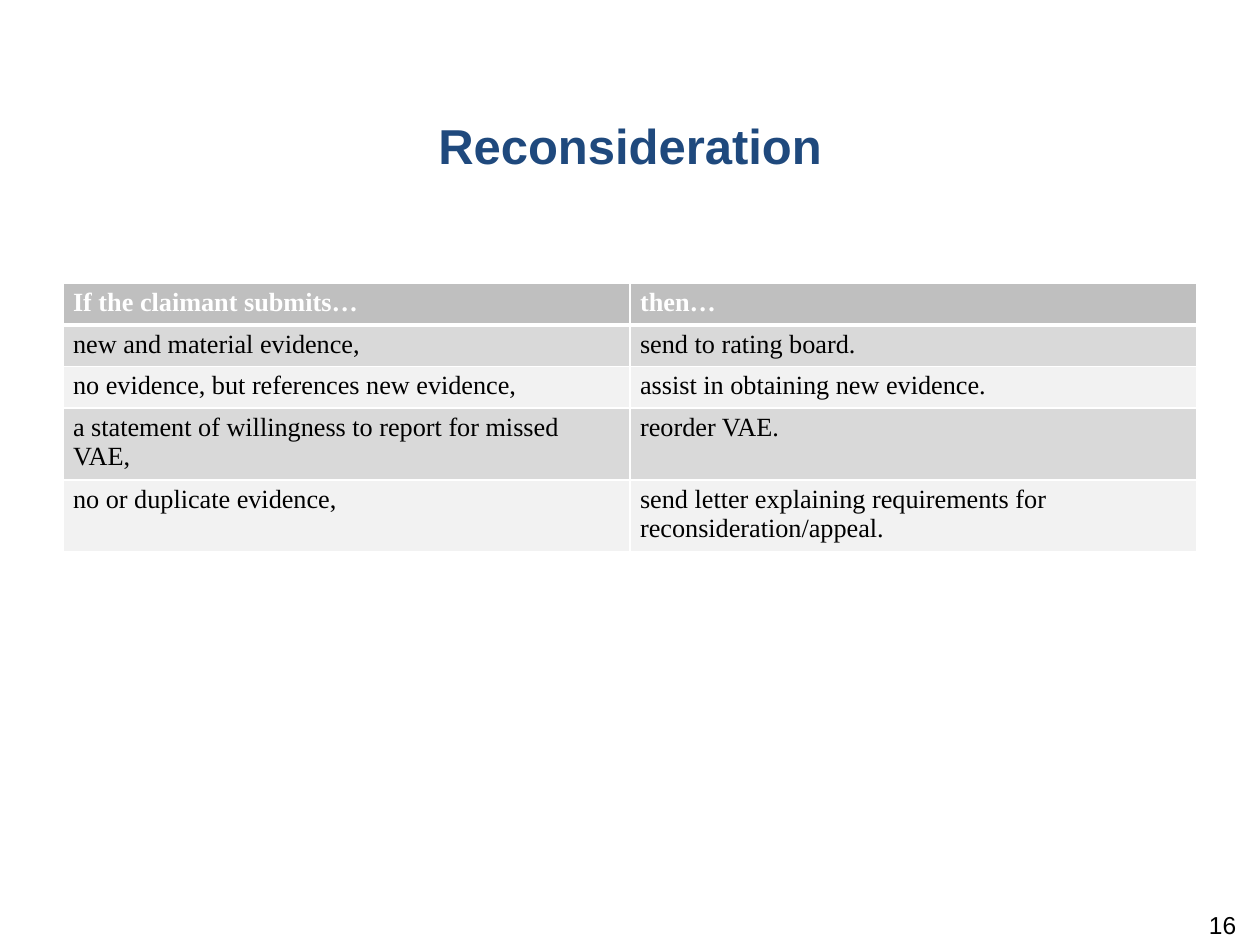
from dataclasses import dataclass
from typing import Any

from lxml.etree import SubElement
from pptx import Presentation
from pptx.dml.color import RGBColor
from pptx.enum.text import MSO_ANCHOR, PP_ALIGN
from pptx.oxml.ns import qn
from pptx.util import Inches, Pt


@dataclass(frozen=True)
class Theme:
    title: str = "1F497D"
    text: str = "000000"
    white: str = "FFFFFF"
    header: str = "BFBFBF"
    bands: tuple[str, str] = ("D9D9D9", "F2F2F2")
    sans: str = "Arial"
    serif: str = "Times New Roman"
    title_size: float = 28
    table_size: float = 15
    number_size: float = 14


@dataclass(frozen=True)
class Rule:
    condition: str
    action: str
    height: float


THEME = Theme()
RULES = [
    Rule("If the claimant submits…", "then…", 0.33),
    Rule("new and material evidence,", "send to rating board.", 0.33),
    Rule("no evidence, but references new evidence,", "assist in obtaining new evidence.", 0.33),
    Rule("a statement of willingness to report for missed VAE,", "reorder VAE.", 0.57),
    Rule("no or duplicate evidence,", "send letter explaining requirements for reconsideration/appeal.", 0.57),
]


def apply_format(target: Any, values: dict[str, Any]) -> None:
    for name, value in values.items():
        setattr(target, name, value)


def write_text(frame: Any, text: str, font: str, size: float, color: str, bold: bool = False,
               align: PP_ALIGN = PP_ALIGN.LEFT, space_after: float = 0) -> None:
    para = frame.paragraphs[0]
    apply_format(para, {"alignment": align, "space_after": Pt(space_after)})
    span = para.add_run()
    span.text = text
    apply_format(span.font, {"name": font, "size": Pt(size), "bold": bold})
    span.font.color.rgb = RGBColor.from_string(color)


def set_borders(cell: Any, bottom_width: float) -> None:
    properties = cell._tc.get_or_add_tcPr()
    widths = {"a:lnL": 1, "a:lnR": 1, "a:lnT": 1, "a:lnB": bottom_width}
    for position, (tag, width) in enumerate(widths.items()):
        line = SubElement(properties, qn(tag), w=str(Pt(width)))
        fill = SubElement(line, qn("a:solidFill"))
        SubElement(fill, qn("a:srgbClr"), val=THEME.white)
        properties.insert(position, line)


def add_title(slide: Any) -> None:
    title = slide.shapes.title
    apply_format(title, {"left": Inches(0), "top": Inches(0.87),
                         "width": Inches(10), "height": Inches(1.19)})
    apply_format(title.text_frame, {"vertical_anchor": MSO_ANCHOR.TOP, "word_wrap": True})
    write_text(title.text_frame, "Reconsideration", THEME.sans, THEME.title_size,
               THEME.title, True, PP_ALIGN.CENTER, 4.5)


def add_rules(slide: Any, rules: list[Rule]) -> None:
    total = sum(rule.height for rule in rules)
    table = slide.shapes.add_table(len(rules), 2, Inches(0.5), Inches(2.25),
                                   Inches(9), Inches(total)).table
    margins = {"margin_left": Inches(0.08), "margin_right": Inches(0.08),
               "margin_top": Inches(0.04), "margin_bottom": Inches(0.04)}
    for index, rule in enumerate(rules):
        header = index == 0
        table.rows[index].height = Inches(rule.height)
        fill = THEME.header if header else THEME.bands[(index - 1) % 2]
        for column, text in enumerate((rule.condition, rule.action)):
            cell = table.cell(index, column)
            apply_format(cell, margins)
            cell.fill.solid()
            cell.fill.fore_color.rgb = RGBColor.from_string(fill)
            set_borders(cell, 3 if header else 1)
            write_text(cell.text_frame, text, THEME.serif, THEME.table_size,
                       THEME.white if header else THEME.text, header)


def add_slide_number(slide: Any) -> None:
    box = slide.shapes.add_textbox(Inches(7.58), Inches(7.22), Inches(2.33), Inches(0.4))
    apply_format(box.text_frame, {"word_wrap": True, "margin_top": Inches(0)})
    write_text(box.text_frame, "16", THEME.sans, THEME.number_size, THEME.text,
               align=PP_ALIGN.RIGHT, space_after=4.5)


def main() -> None:
    deck = Presentation()
    apply_format(deck, {"slide_width": Inches(10), "slide_height": Inches(7.5)})
    slide = deck.slides.add_slide(deck.slide_layouts[5])
    add_title(slide)
    add_rules(slide, RULES)
    add_slide_number(slide)
    deck.save("out.pptx")


if __name__ == "__main__":
    main()
